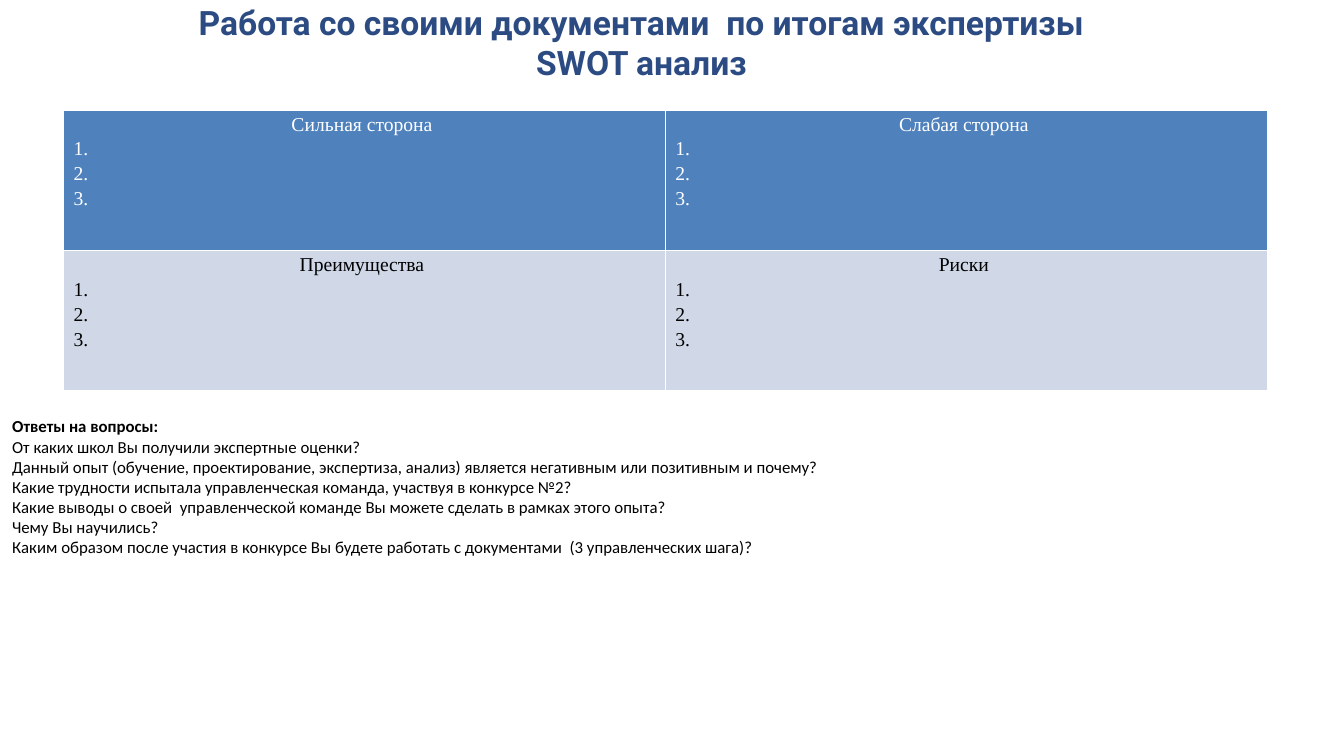
from lxml.etree import SubElement
from pptx import Presentation
from pptx.dml.color import RGBColor
from pptx.enum.text import MSO_ANCHOR as Anchor, PP_ALIGN as Align
from pptx.oxml.ns import qn
from pptx.util import Cm, Pt

TITLE = ["Работа со своими документами  по итогам экспертизы", "SWOT анализ"]
SWOT = [
    (["Сильная сторона ", "Слабая сторона "], "4F81BD", "FFFFFF"),
    (["Преимущества ", "Риски "], "D0D8E8", "000000"),
]
NUMBERS = ["1.", "2.", "3."]
HEADING = "Ответы на вопросы:"
QUESTIONS = [
    "От каких школ Вы получили экспертные оценки?",
    "Данный опыт (обучение, проектирование, экспертиза, анализ) является негативным или позитивным и почему?",
    "Какие трудности испытала управленческая команда, участвуя в конкурсе №2?",
    "Какие выводы о своей  управленческой команде Вы можете сделать в рамках этого опыта?",
    "Чему Вы научились?",
    "Каким образом после участия в конкурсе Вы будете работать с документами  (3 управленческих шага)?",
]


def color(value):
    return RGBColor.from_string(value)


def write(frame, text, first=False, font="Calibri", size=18, ink="000000",
          bold=False, align=Align.LEFT, spacing=1.0):
    para = frame.paragraphs[0] if first else frame.add_paragraph()
    para.alignment = align
    para.line_spacing = spacing
    span = para.add_run()
    span.text = text
    span.font.name = font
    span.font.size = Pt(size)
    span.font.bold = bold
    span.font.color.rgb = color(ink)


def add_box(page, left, top, width, height, anchor):
    frame = page.shapes.add_textbox(Cm(left), Cm(top), Cm(width), Cm(height)).text_frame
    frame.word_wrap = True
    frame.vertical_anchor = anchor
    frame.margin_left = frame.margin_right = Cm(0.46)
    frame.margin_top = frame.margin_bottom = Cm(0.23)
    return frame


def add_borders(cell, ink="FFFFFF", width=1):
    properties = cell._tc.get_or_add_tcPr()
    for side in ("lnL", "lnR", "lnT", "lnB"):
        line = SubElement(properties, qn(f"a:{side}"), w=str(Pt(width)))
        fill = SubElement(line, qn("a:solidFill"))
        SubElement(fill, qn("a:srgbClr"), val=ink)


def fill_cell(cell, heading, background, ink):
    cell.margin_left = cell.margin_right = Cm(0.38)
    cell.margin_top = cell.margin_bottom = 0
    add_borders(cell)
    cell.fill.solid()
    cell.fill.fore_color.rgb = color(background)
    style = dict(font="Times New Roman", size=21, ink=ink, spacing=1.15)
    write(cell.text_frame, heading, first=True, align=Align.CENTER, **style)
    for number in NUMBERS:
        write(cell.text_frame, number, **style)


def main():
    deck = Presentation()
    deck.slide_width, deck.slide_height = Cm(50.8), Cm(28.58)
    page = deck.slides.add_slide(deck.slide_layouts[6])

    title = add_box(page, 1.27, 0.1, 45.95, 3, Anchor.MIDDLE)
    for index, line in enumerate(TITLE):
        write(title, line, first=index == 0, font="Roboto", size=36,
              ink="2B4B82", bold=True, align=Align.CENTER)

    table = page.shapes.add_table(2, 2, Cm(2.4), Cm(4.17), Cm(45.5), Cm(10.6)).table
    table.first_row = table.horz_banding = False
    for row, (headings, background, ink) in enumerate(SWOT):
        for column, heading in enumerate(headings):
            fill_cell(table.cell(row, column), heading, background, ink)

    answers = add_box(page, 0, 15.5, 49.2, 6.6, Anchor.TOP)
    write(answers, HEADING, first=True, bold=True)
    for question in QUESTIONS:
        write(answers, question)

    deck.save("out.pptx")


if __name__ == "__main__":
    main()
